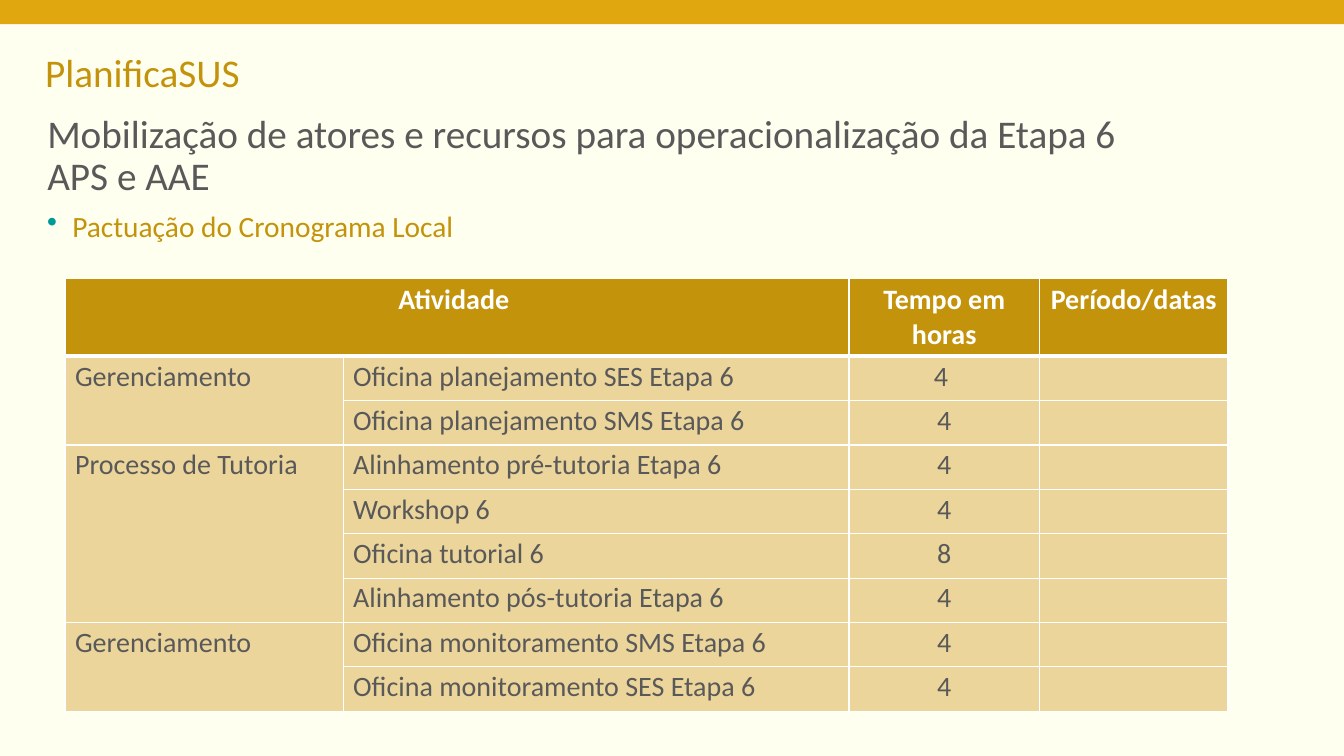
from lxml import etree
from pptx import Presentation
from pptx.dml.color import RGBColor
from pptx.enum.shapes import MSO_SHAPE
from pptx.enum.text import MSO_ANCHOR, MSO_AUTO_SIZE, PP_ALIGN
from pptx.oxml.ns import qn
from pptx.util import Pt

LEFT, CENTER = PP_ALIGN.LEFT, PP_ALIGN.CENTER
TOP, MIDDLE = MSO_ANCHOR.TOP, MSO_ANCHOR.MIDDLE
NO_AUTOFIT = MSO_AUTO_SIZE.NONE
RECT = MSO_SHAPE.RECTANGLE
TITLE_ONLY = 5

GOLD, AMBER, SAND = "C3930B", "E0A70F", "EBD59B"
GRAY, TEAL, WHITE, CREAM = "595959", "009999", "FFFFFF", "FFFFF0"

HEADERS = ["Atividade ", "", "Tempo em horas", "Período/datas"]
GROUPS = [
    ("Gerenciamento", [("Oficina planejamento SES Etapa 6", "4 "),
                       ("Oficina planejamento SMS Etapa 6", "4")]),
    ("Processo de Tutoria", [("Alinhamento pré-tutoria Etapa 6", "4"),
                             ("Workshop 6", "4"),
                             ("Oficina tutorial 6", "8"),
                             ("Alinhamento pós-tutoria Etapa 6", "4")]),
    ("Gerenciamento", [("Oficina monitoramento SMS Etapa 6", "4"),
                       ("Oficina monitoramento SES Etapa 6", "4")]),
]


def rgb(color):
    return RGBColor.from_string(color)


def add_bullet(p, color, indent):
    pPr = p._p.get_or_add_pPr()
    pPr.set("marL", str(Pt(indent)))
    pPr.set("indent", str(-Pt(indent)))
    clr = etree.SubElement(pPr, qn("a:buClr"))
    etree.SubElement(clr, qn("a:srgbClr"), val=color)
    etree.SubElement(pPr, qn("a:buChar"), char="•")


def add_borders(cell, color, **widths):
    """Draw cell borders; must run before the cell gets its fill."""
    tcPr = cell._tc.get_or_add_tcPr()
    for side in "LRTB":
        ln = etree.SubElement(tcPr, qn(f"a:ln{side}"), w=str(Pt(widths.get(side, 1))))
        fill = etree.SubElement(ln, qn("a:solidFill"))
        etree.SubElement(fill, qn("a:srgbClr"), val=color)


class Deck:
    """Holds the font and the current slide."""

    def __init__(self, prs, font="Calibri"):
        self.font = font
        self.slide = prs.slides.add_slide(prs.slide_layouts[TITLE_ONLY])
        fill = self.slide.background.fill
        fill.solid()
        fill.fore_color.rgb = rgb(CREAM)

    def put_text(self, tf, text, size=20, color=GRAY, bold=False, align=LEFT,
                 spacing=None, bullet=None):
        p = tf.paragraphs[0]
        if bullet:
            add_bullet(p, bullet, 18)
        p.alignment = align
        if spacing:
            p.line_spacing = spacing
        if text:
            r = p.add_run()
            r.text = text
            r.font.name, r.font.size, r.font.bold = self.font, Pt(size), bold
            r.font.color.rgb = rgb(color)

    def title(self, text, x, y, w, h, **fmt):
        sp = self.slide.shapes.title
        sp.left, sp.top, sp.width, sp.height = Pt(x), Pt(y), Pt(w), Pt(h)
        tf = sp.text_frame
        tf.word_wrap, tf.auto_size, tf.vertical_anchor = True, NO_AUTOFIT, MIDDLE
        self.put_text(tf, text, **fmt)

    def text(self, text, x, y, w, h, wrap=True, **fmt):
        tf = self.slide.shapes.add_textbox(Pt(x), Pt(y), Pt(w), Pt(h)).text_frame
        tf.word_wrap, tf.vertical_anchor = wrap, TOP
        self.put_text(tf, text, **fmt)

    def bar(self, x, y, w, h, color):
        sp = self.slide.shapes.add_shape(RECT, Pt(x), Pt(y), Pt(w), Pt(h))
        sp.shadow.inherit = False
        sp.fill.solid()
        sp.fill.fore_color.rgb = rgb(color)
        sp.line.fill.background()

    def table(self, x, y, widths, heights):
        frame = self.slide.shapes.add_table(
            len(heights), len(widths), Pt(x), Pt(y), Pt(sum(widths)), Pt(sum(heights)))
        tbl = frame.table
        for col, w in zip(tbl.columns, widths):
            col.width = Pt(w)
        for row, h in zip(tbl.rows, heights):
            row.height = Pt(h)
        return tbl

    def cell(self, cell, text, fill, borders, **fmt):
        add_borders(cell, WHITE, **borders)
        cell.fill.solid()
        cell.fill.fore_color.rgb = rgb(fill)
        self.put_text(cell.text_frame, text, **fmt)


def add_schedule(deck):
    rows = [(group if i == 0 else "", activity, hours, "")
            for group, items in GROUPS
            for i, (activity, hours) in enumerate(items)]
    tbl = deck.table(46.4, 198.7, [198.7, 361.4, 136, 134.7],
                     [55.8] + [31.7] * len(rows))
    for c, text in enumerate(HEADERS):
        deck.cell(tbl.cell(0, c), text, GOLD, {"B": 3},
                  color=WHITE, bold=True, align=CENTER)
    for r, row in enumerate(rows, 1):
        for c, text in enumerate(row):
            deck.cell(tbl.cell(r, c), text, SAND, {"T": 3} if r == 1 else {},
                      align=CENTER if c == 2 else LEFT, spacing=0.9)
    tbl.cell(0, 0).merge(tbl.cell(0, 1))
    top = 1
    for _, items in GROUPS:
        tbl.cell(top, 0).merge(tbl.cell(top + len(items) - 1, 0))
        top += len(items)


def main():
    prs = Presentation()
    prs.slide_width, prs.slide_height = Pt(960), Pt(540)
    deck = Deck(prs)
    deck.text("PlanificaSUS", 25.2, 31, 154.8, 41, wrap=False, size=28, color=GOLD)
    deck.bar(0, 0, 960, 17.3, AMBER)
    deck.title("Mobilização de atores e recursos para operacionalização da Etapa 6 APS e AAE",
               26.6, 59.8, 791.3, 104.4, size=28, spacing=0.9)
    deck.text("Pactuação do Cronograma Local", 26.6, 149.8, 791.3, 28.8,
              size=21, color=GOLD, spacing=0.8, bullet=TEAL)
    add_schedule(deck)
    prs.save("out.pptx")


if __name__ == "__main__":
    main()
